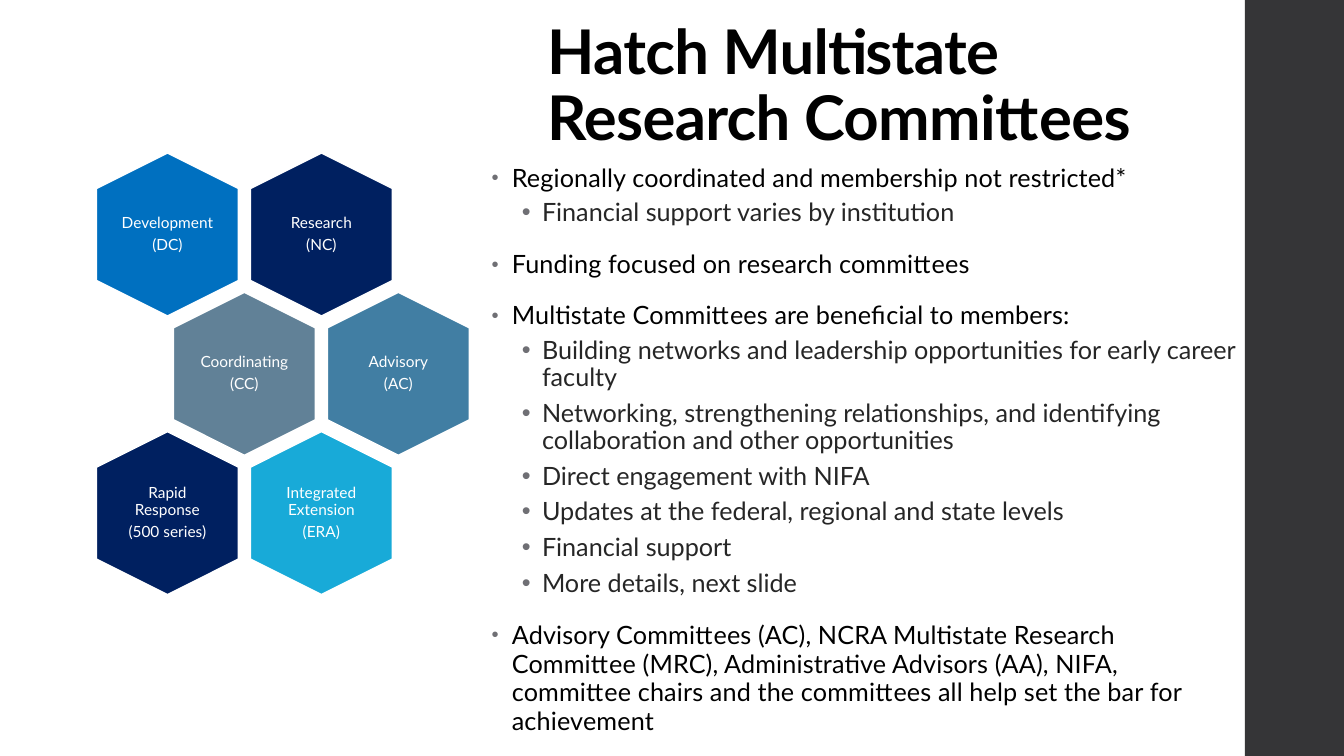
from dataclasses import dataclass

import pptx
import pptx.dml.color
import pptx.enum.shapes
import pptx.enum.text
import pptx.oxml.ns
import pptx.util
from lxml import etree

Cm = pptx.util.Cm
Pt = pptx.util.Pt
RGBColor = pptx.dml.color.RGBColor
Anchor = pptx.enum.text.MSO_ANCHOR
Shape = pptx.enum.shapes.MSO_SHAPE

FONT = "Lato"
BLACK = RGBColor(0x00, 0x00, 0x00)
WHITE = RGBColor(0xFF, 0xFF, 0xFF)
CHARCOAL = RGBColor(0x35, 0x35, 0x37)
DARK_GRAY = RGBColor(0x26, 0x26, 0x26)
BULLET_GRAY = RGBColor(0x6F, 0x6F, 0x74)
NAVY = RGBColor(0x00, 0x20, 0x60)
BLUE = RGBColor(0x00, 0x70, 0xC0)
SLATE = RGBColor(0x61, 0x81, 0x97)
STEEL = RGBColor(0x41, 0x7E, 0xA3)
SKY = RGBColor(0x18, 0xAA, 0xD8)

# Honeycomb, in centimetres: odd rows move right by half a column
FIRST_CENTER_X, FIRST_CENTER_Y = 4.22, 5.91
COLUMN_PITCH, ROW_PITCH = 3.88, 3.51
HEXAGON_LENGTH, HEXAGON_BREADTH = 4.11, 3.58
LABEL_WIDTH, LABEL_HEIGHT = 2.46, 2.84


@dataclass(frozen=True)
class Committee:
    row: int
    column: int
    name: str
    code: str
    color: RGBColor


@dataclass(frozen=True)
class BulletLevel:
    margin: float
    line_spacing: float
    before: float
    after: float
    color: RGBColor
    tracking: int
    bullet_percent: int


@dataclass(frozen=True)
class Point:
    text: str
    level: int = 0


COMMITTEES = [
    Committee(0, 0, "Development", "(DC)", BLUE),
    Committee(0, 1, "Research", "(NC)", NAVY),
    Committee(1, 0, "Coordinating", "(CC)", SLATE),
    Committee(1, 1, "Advisory", "(AC)", STEEL),
    Committee(2, 0, "Rapid Response", "(500 series)", NAVY),
    Committee(2, 1, "Integrated Extension", "(ERA)", SKY),
]

LEVELS = [
    BulletLevel(0.51, 0.95, 14, 2, BLACK, 10, 80),
    BulletLevel(1.27, 0.9, 3, 3, DARK_GRAY, 0, 100),
]

POINTS = [
    Point("Regionally coordinated and membership not restricted*"),
    Point("Financial support varies by institution", 1),
    Point("Funding focused on research committees"),
    Point("Multistate Committees are beneficial to members:"),
    Point("Building networks and leadership opportunities for early career faculty", 1),
    Point("Networking, strengthening relationships, and identifying "
          "collaboration and other opportunities", 1),
    Point("Direct engagement with NIFA", 1),
    Point("Updates at the federal, regional and state levels", 1),
    Point("Financial support", 1),
    Point("More details, next slide", 1),
    Point("Advisory Committees (AC), NCRA Multistate Research Committee (MRC), "
          "Administrative Advisors (AA), NIFA, committee chairs and the "
          "committees all help set the bar for achievement"),
]


def add_text_frame(page, left: float, top: float, width: float, height: float, anchor):
    box = page.shapes.add_textbox(Cm(left), Cm(top), Cm(width), Cm(height))
    frame = box.text_frame
    frame.word_wrap = True
    frame.vertical_anchor = anchor
    return frame


def next_paragraph(frame, index: int):
    """Return the frame's ready first paragraph for index 0, else a new one."""
    return frame.add_paragraph() if index else frame.paragraphs[0]


def add_span(para, text: str, size: float, color: RGBColor,
             bold: bool = False, tracking: int = 0) -> None:
    """Add a run; tracking is in hundredths of a point."""
    span = para.add_run()
    span.text = text
    span.font.name = FONT
    span.font.size = Pt(size)
    span.font.bold = bold
    span.font.color.rgb = color
    if tracking:
        span.font._element.set("spc", str(tracking))


def add_bullet(para, level: BulletLevel) -> None:
    properties = para._p.get_or_add_pPr()
    properties.set("marL", str(Cm(level.margin)))
    properties.set("indent", str(-Cm(LEVELS[0].margin)))
    qn = pptx.oxml.ns.qn
    tint = etree.SubElement(properties, qn("a:buClr"))
    etree.SubElement(tint, qn("a:srgbClr"), val=str(BULLET_GRAY))
    etree.SubElement(properties, qn("a:buSzPct"), val=str(level.bullet_percent * 1000))
    etree.SubElement(properties, qn("a:buFont"), typeface="Arial")
    etree.SubElement(properties, qn("a:buChar"), char="•")


def add_side_bar(page) -> None:
    bar = page.shapes.add_shape(Shape.RECTANGLE, Cm(31.37), Cm(0), Cm(2.5), Cm(19.05))
    bar.shadow.inherit = False
    bar.fill.solid()
    bar.fill.fore_color.rgb = CHARCOAL
    bar.line.fill.background()


def add_title(page) -> None:
    frame = add_text_frame(page, 13.54, 0.33, 16.66, 3.68, Anchor.BOTTOM)
    para = frame.paragraphs[0]
    para.line_spacing = 0.9
    add_span(para, "Hatch Multistate Research Committees", 44, BLACK, True, -50)


def add_points(page) -> None:
    frame = add_text_frame(page, 12.14, 4.01, 19.48, 14.71, Anchor.TOP)
    for index, point in enumerate(POINTS):
        level = LEVELS[point.level]
        para = next_paragraph(frame, index)
        para.level = point.level
        para.line_spacing = level.line_spacing
        para.space_before = Pt(level.before)
        para.space_after = Pt(level.after)
        add_bullet(para, level)
        add_span(para, point.text, 18, level.color, tracking=level.tracking)


def add_committee(page, committee: Committee) -> None:
    column = committee.column + (committee.row % 2) / 2
    center_x = FIRST_CENTER_X + column * COLUMN_PITCH
    center_y = FIRST_CENTER_Y + committee.row * ROW_PITCH

    hexagon = page.shapes.add_shape(
        Shape.HEXAGON, Cm(center_x - HEXAGON_LENGTH / 2), Cm(center_y - HEXAGON_BREADTH / 2),
        Cm(HEXAGON_LENGTH), Cm(HEXAGON_BREADTH))
    hexagon.rotation = 90
    hexagon.adjustments[0] = 0.25
    hexagon.adjustments[1] = 1.1547
    hexagon.shadow.inherit = False
    hexagon.fill.solid()
    hexagon.fill.fore_color.rgb = committee.color
    hexagon.line.color.rgb = WHITE
    hexagon.line.width = Pt(1.1)

    frame = add_text_frame(page, center_x - LABEL_WIDTH / 2, center_y - LABEL_HEIGHT / 2,
                           LABEL_WIDTH, LABEL_HEIGHT, Anchor.MIDDLE)
    frame.margin_left = frame.margin_right = frame.margin_top = frame.margin_bottom = 0
    for index, text in enumerate((committee.name, committee.code)):
        para = next_paragraph(frame, index)
        para.alignment = pptx.enum.text.PP_ALIGN.CENTER
        para.line_spacing = 0.9
        para.space_after = Pt(3.85)
        add_span(para, text, 11, WHITE)


def main() -> None:
    deck = pptx.Presentation()
    deck.slide_width, deck.slide_height = Cm(33.87), Cm(19.05)
    page = deck.slides.add_slide(deck.slide_layouts[6])
    add_side_bar(page)
    add_title(page)
    add_points(page)
    for committee in COMMITTEES:
        add_committee(page, committee)
    deck.save("out.pptx")


if __name__ == "__main__":
    main()
